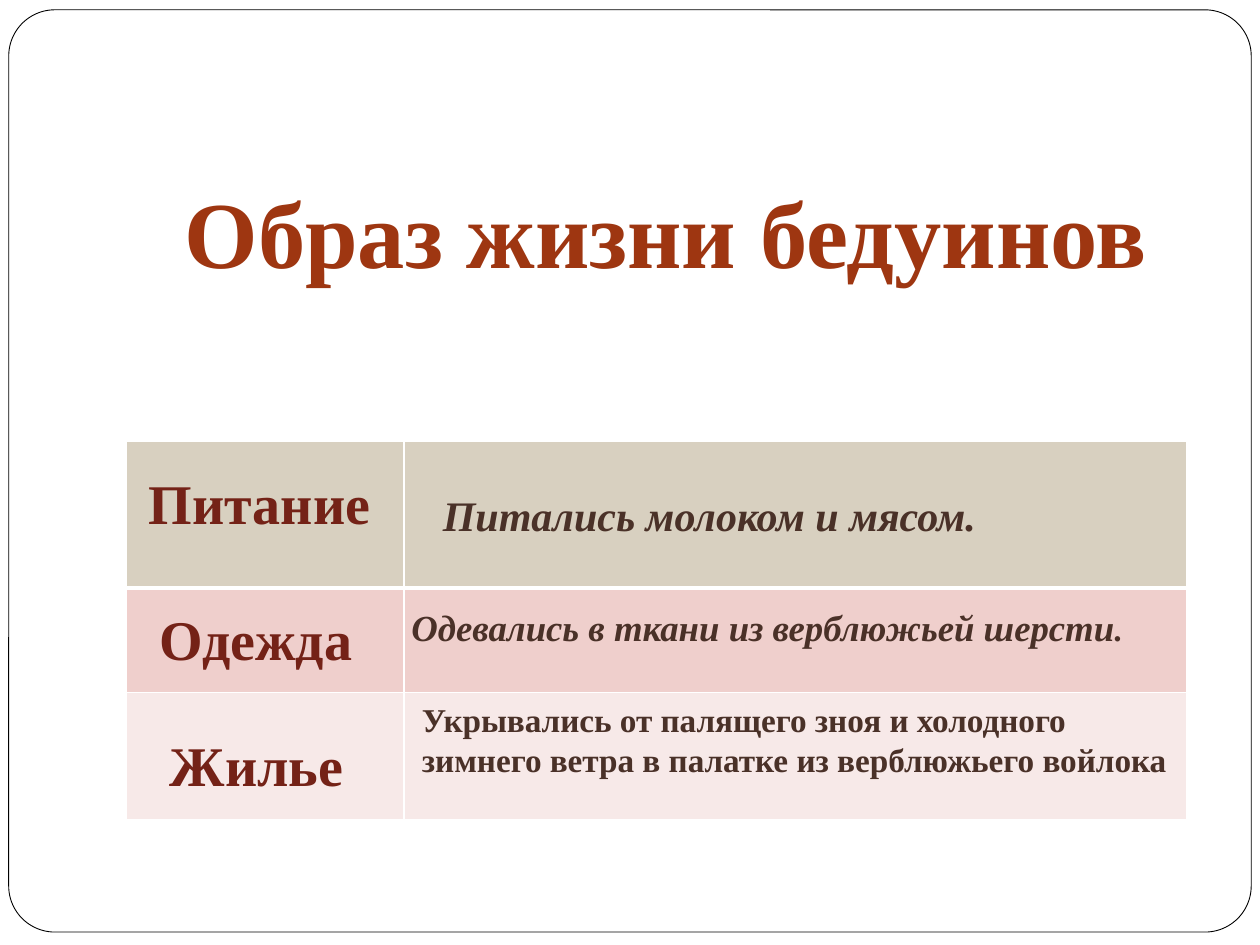
"""Builds the slide on the Bedouin way of life."""
from lxml import etree
from pptx import Presentation
from pptx.dml.color import RGBColor
from pptx.enum import shapes, text
from pptx.oxml import ns
from pptx.util import Pt


def rgb(value):
    return RGBColor.from_string(value)


def write(sp, content, size, color, italic=False, align=text.PP_ALIGN.LEFT, tail="", tail_size=None):
    tf = sp.text_frame
    tf.word_wrap = True
    tf.auto_size = text.MSO_AUTO_SIZE.NONE
    tf.vertical_anchor = text.MSO_ANCHOR.TOP
    p = tf.paragraphs[0]
    p.alignment = align
    for part, points in ((content, size), (tail, tail_size)):
        if part:
            r = p.add_run()
            r.text = part
            r.font.name = "Times New Roman"
            r.font.size = Pt(points)
            r.font.bold = True
            r.font.italic = italic
            r.font.color.rgb = rgb(color)


prs = Presentation()
prs.slide_width, prs.slide_height = Pt(720), Pt(540)
s = prs.slides.add_slide(prs.slide_layouts[5])

frame = s.shapes.add_shape(shapes.MSO_SHAPE.ROUNDED_RECTANGLE, Pt(5), Pt(5.6), Pt(710), Pt(527))
frame.adjustments[0] = 0.05
frame.shadow.inherit = False
frame.fill.solid()
frame.fill.fore_color.rgb = rgb("FFFFFF")
frame.line.color.rgb = rgb("000000")
frame.line.width = Pt(0.5)

table = s.shapes.add_table(3, 2, Pt(72), Pt(252), Pt(606), Pt(216.5)).table
for column, width in zip(table.columns, (159, 447)):
    column.width = Pt(width)
row_styles = ((84, "D8D0C0"), (59.8, "EFCFCC"), (72.7, "F7E9E8"))
for i, (height, color) in enumerate(row_styles):
    table.rows[i].height = Pt(height)
    for cell in table.rows[i].cells:
        tcPr = cell._tc.get_or_add_tcPr()
        for side in "LRTB":
            heavy = (i, side) in ((0, "B"), (1, "T"))
            ln = etree.SubElement(tcPr, ns.qn(f"a:ln{side}"), w=str(Pt(3 if heavy else 1)))
            fill = etree.SubElement(ln, ns.qn("a:solidFill"))
            etree.SubElement(fill, ns.qn("a:srgbClr"), val="FFFFFF")
        cell.fill.solid()
        cell.fill.fore_color.rgb = rgb(color)

title = s.shapes.title
s.shapes._spTree.append(title._element)
title.left, title.top, title.width, title.height = Pt(72), Pt(96), Pt(617), Pt(72.7)
write(title, "Образ жизни бедуинов", 54, "9E3611", align=text.PP_ALIGN.CENTER)

label = dict(size=32, color="742217")
detail = dict(color="4A3128")
boxes = (
    ("Питание", 78, 264, 149, 46, label),
    ("Одежда", 84, 342, 135, 46, label),
    ("Жилье", 90, 414, 127, 46, label),
    ("Питались молоком и мясом.", 246, 276, 352, 36, dict(detail, size=24, italic=True)),
    ("Одевались в ткани из верблюжьей шерсти", 228, 342, 467, 32.4,
     dict(detail, size=21, italic=True, tail=".", tail_size=19)),
    ("Укрывались от палящего зноя и холодного зимнего ветра в палатке из верблюжьего войлока",
     234, 396, 444, 76, dict(detail, size=19)),
)
for content, left, top, width, height, style in boxes:
    sp = s.shapes.add_textbox(Pt(left), Pt(top), Pt(width), Pt(height))
    write(sp, content, **style)

prs.save("out.pptx")
